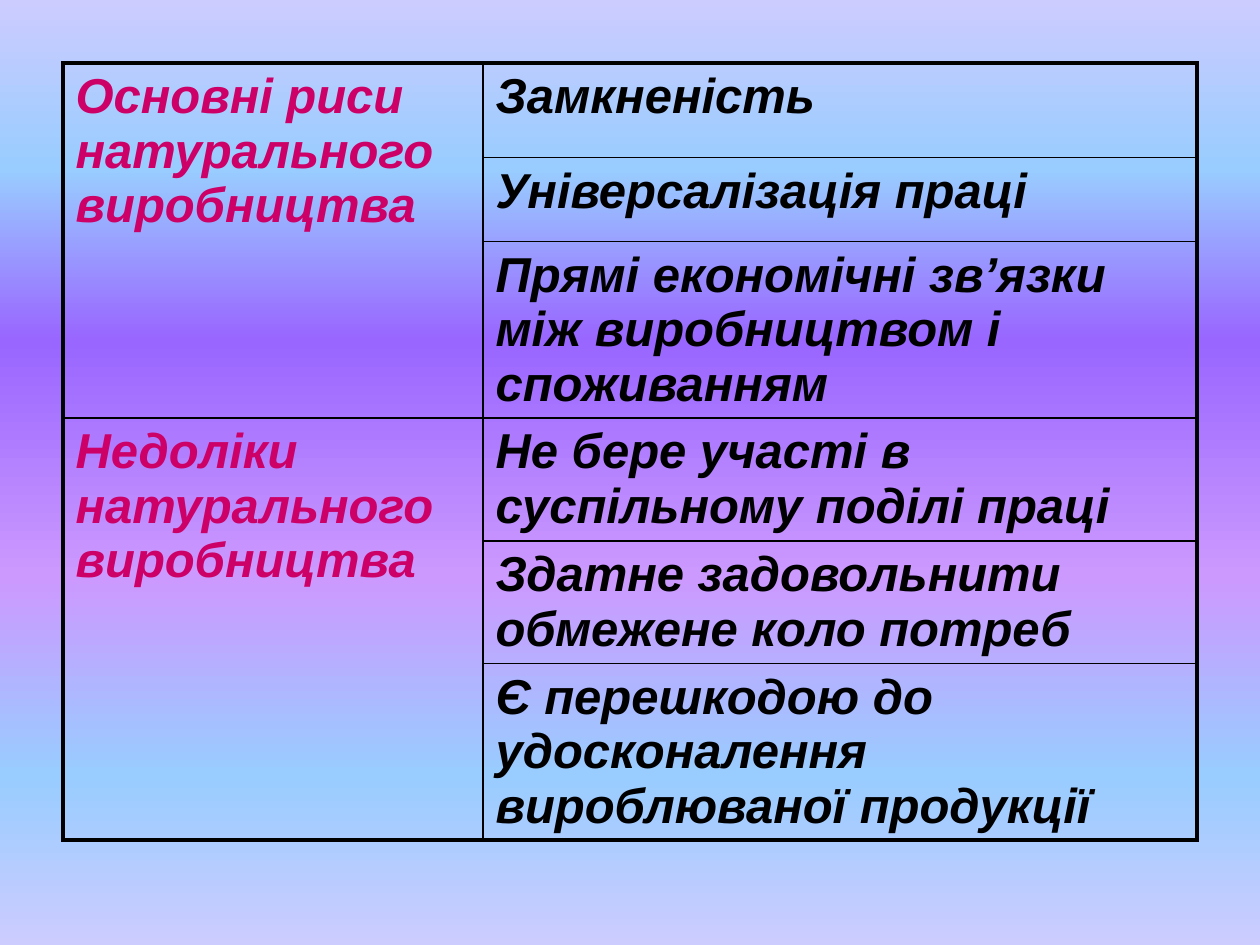
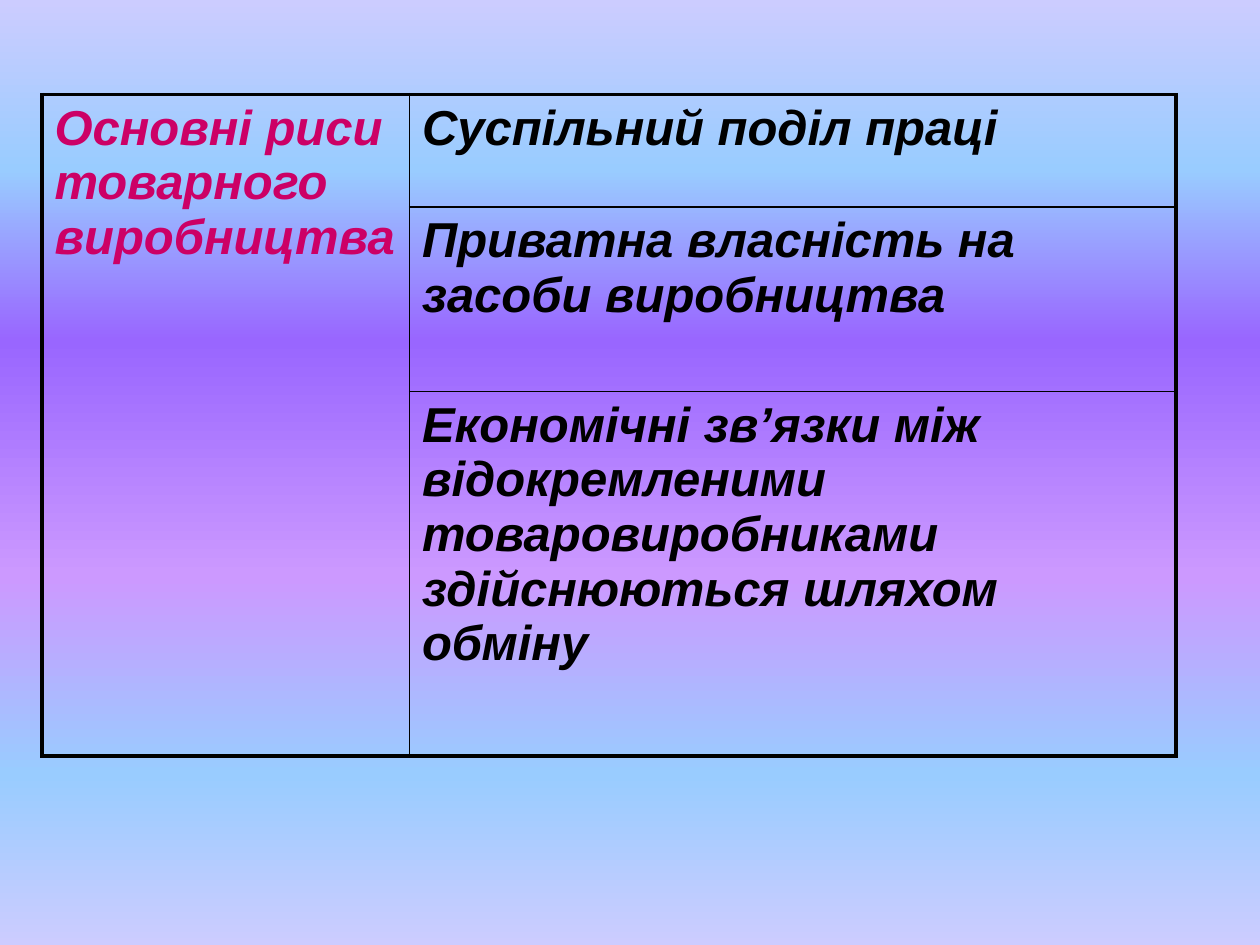
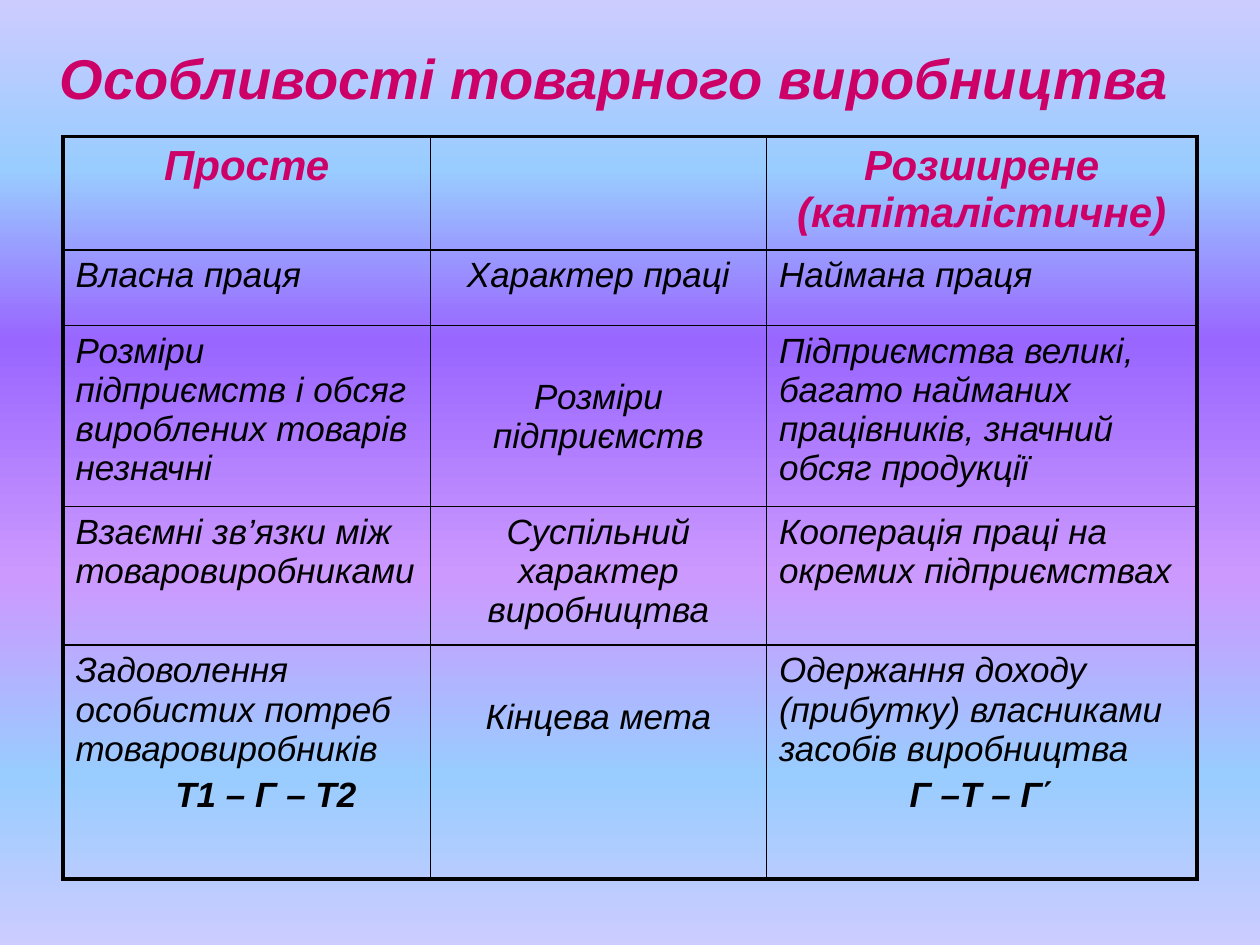
"""Builds three slides that compare subsistence and commodity production."""
from dataclasses import dataclass
from typing import Any, Optional

from lxml.etree import SubElement as Sub
from pptx import Presentation as Deck
from pptx.dml.color import RGBColor as Rgb
from pptx.enum.text import MSO_ANCHOR as Anchor, PP_ALIGN as Align
from pptx.oxml.ns import qn
from pptx.util import Inches, Pt

WIDE, HIGH = Inches(10), Inches(7.5)
COL, ROW = WIDE / 120, HIGH / 90
THICK, THIN = 2.25, 1
HEX = {"ink": "000000", "rose": "CC0066", "pale": "CCCCFF",
       "sky": "99CCFF", "violet": "9966FF", "lilac": "CC99FF"}
STOPS = ((0, "pale"), (18, "sky"), (36, "violet"),
         (61, "lilac"), (82, "sky"), (100, "pale"))


@dataclass(frozen=True)
class Look:
    """Size, weight, colour and alignment of a text."""
    size: int
    bold: bool
    tint: str
    align: Any = Align.LEFT

    def font(self) -> dict:
        """Give the font values to set."""
        return {"name": "Arial", "size": Pt(self.size),
                "bold": self.bold, "italic": True}


TITLE = Look(32, True, "rose", Align.CENTER)
HEAD = Look(24, True, "rose", Align.CENTER)
SIDE = Look(28, True, "rose")
POINT = Look(28, True, "ink")
NOTE = Look(20, False, "ink")
MID = Look(20, False, "ink", Align.CENTER)
SUM = Look(20, True, "ink", Align.CENTER)


@dataclass(frozen=True)
class Cell:
    """One table cell, with an optional formula below its text."""
    text: str
    look: Look
    span: int = 1
    drop: float = 0
    sum: str = ""
    pad: int = 0


@dataclass(frozen=True)
class Grid:
    """A table placed in grid columns and rows."""
    left: float
    top: float
    cols: tuple
    rows: tuple
    cells: tuple


def side(text: str) -> Cell:
    """Make a heading that spans three rows."""
    return Cell(text, SIDE, span=3)


def point(text: str) -> Cell:
    """Make a statement cell."""
    return Cell(text, POINT)


def note(text: str, sum: str = "", pad: int = 0) -> Cell:
    """Make a detail cell."""
    return Cell(text, NOTE, sum=sum, pad=pad)


def mid(text: str, drop: float = 0) -> Cell:
    """Make a centred criterion cell."""
    return Cell(text, MID, drop=drop)


NATURE = Grid(6, 6, (40, 68), (9, 8, 16.8, 11.7, 11.7, 16.8), (
    (side("Основні риси натурального виробництва"), point("Замкненість")),
    (None, point("Універсалізація праці")),
    (None, point("Прямі економічні зв’язки між виробництвом і споживанням")),
    (side("Недоліки натурального виробництва"),
     point("Не бере участі в суспільному поділі праці")),
    (None, point("Здатне задовольнити обмежене коло потреб")),
    (None, point("Є перешкодою до удосконалення вироблюваної продукції"))))

GOODS = Grid(4, 9, (35, 73), (10.7, 17.6, 34.7), (
    (side("Основні риси товарного виробництва"),
     point("Суспільний поділ праці")),
    (None, point("Приватна власність на засоби виробництва")),
    (None, point("Економічні зв’язки між відокремленими товаровиробниками "
                 "здійснюються шляхом обміну"))))

TYPES = Grid(6, 13, (35, 32, 41), (10.1, 7.2, 16.1, 12.4, 22.3), (
    (Cell("Просте", HEAD), Cell("", HEAD),
     Cell("Розширене (капіталістичне)", HEAD)),
    (note("Власна праця"), mid("Характер праці"), note("Наймана праця")),
    (note("Розміри підприємств і обсяг вироблених товарів незначні"),
     mid("Розміри підприємств", 4.4),
     note("Підприємства великі, багато найманих працівників, "
          "значний обсяг продукції")),
    (note("Взаємні зв’язки між товаровиробниками"),
     mid("Суспільний характер виробництва"),
     note("Кооперація праці на окремих підприємствах")),
    (note("Задоволення особистих потреб товаровиробників",
          "Т1 – Г – Т2", 22),
     mid("Кінцева мета", 4.4),
     note("Одержання доходу (прибутку) власниками засобів виробництва",
          "Г –Т – Г΄"))))

PAGES = ((None, NATURE), (None, GOODS),
         ("Особливості товарного виробництва", TYPES))


def paint(master: Any) -> None:
    """Give all slides the shared gradient."""
    fill = master.background.fill
    fill.gradient()
    fill.gradient_angle = 270
    stops = master.element.find(".//" + qn("p:bg")).find(".//" + qn("a:gsLst"))
    for old in list(stops):
        stops.remove(old)
    for place, tint in STOPS:
        stop = Sub(stops, qn("a:gs"), pos=str(place * 1000))
        Sub(stop, qn("a:srgbClr"), val=HEX[tint])


def write(para: Any, text: str, look: Look) -> None:
    """Write a text in its look."""
    para.alignment = look.align
    font = para.add_run().font if not text else None
    if text:
        run = para.add_run()
        run.text = text
        font = run.font
    for key, value in look.font().items():
        setattr(font, key, value)
    font.color.rgb = Rgb.from_string(HEX[look.tint])


def edge(box: Any, ends: dict) -> None:
    """Draw cell borders, thick on the rim of the table."""
    props = box._tc.get_or_add_tcPr()
    for at, (name, rim) in enumerate(ends.items()):
        width = Pt(THICK if rim else THIN)
        line = props.makeelement(qn("a:ln" + name), {"w": str(int(width))})
        props.insert(at, line)
        fill = Sub(line, qn("a:solidFill"))
        Sub(fill, qn("a:srgbClr"), val=HEX["ink"])


def fill(box: Any, cell: Cell) -> None:
    """Fill a table cell with its text and formula."""
    box.fill.background()
    box.margin_top = Inches(0.05) + int(cell.drop * ROW)
    frame = box.text_frame
    if cell.text:
        write(frame.paragraphs[0], cell.text, cell.look)
    if cell.sum:
        para = frame.add_paragraph()
        para.space_before = Pt(4)
        write(para, cell.sum, SUM)
        para._p.get_or_add_pPr().set("marL", str(int(Pt(cell.pad))))


def draw(slide: Any, grid: Grid) -> None:
    """Draw a table on the slide."""
    rows, cols = len(grid.rows), len(grid.cols)
    table = slide.shapes.add_table(
        rows, cols, int(grid.left * COL), int(grid.top * ROW),
        int(sum(grid.cols) * COL), int(sum(grid.rows) * ROW)).table
    table.first_row = table.horz_banding = False
    for col, wide in zip(table.columns, grid.cols):
        col.width = int(wide * COL)
    for row, high in zip(table.rows, grid.rows):
        row.height = int(high * ROW)
    for r, line in enumerate(grid.cells):
        for c, cell in enumerate(line):
            if cell is None:
                continue
            box = table.cell(r, c)
            if cell.span > 1:
                box.merge(table.cell(r + cell.span - 1, c))
            fill(box, cell)
            edge(box, {"L": c == 0, "R": c == cols - 1,
                       "T": r == 0, "B": r + cell.span == rows})


def title(slide: Any, text: Optional[str]) -> None:
    """Write the slide title, if there is one."""
    if not text:
        return
    box = slide.shapes.add_textbox(int(3 * COL), int(3.6 * ROW),
                                   int(111 * COL), int(7.4 * ROW))
    frame = box.text_frame
    for key, value in {"word_wrap": True,
                       "vertical_anchor": Anchor.MIDDLE}.items():
        setattr(frame, key, value)
    write(frame.paragraphs[0], text, TITLE)


def main() -> None:
    """Build and save the deck."""
    deck = Deck()
    deck.slide_width, deck.slide_height = WIDE, HIGH
    paint(deck.slide_master)
    for text, grid in PAGES:
        slide = deck.slides.add_slide(deck.slide_layouts[6])
        title(slide, text)
        draw(slide, grid)
    deck.save("out.pptx")


if __name__ == "__main__":
    main()
